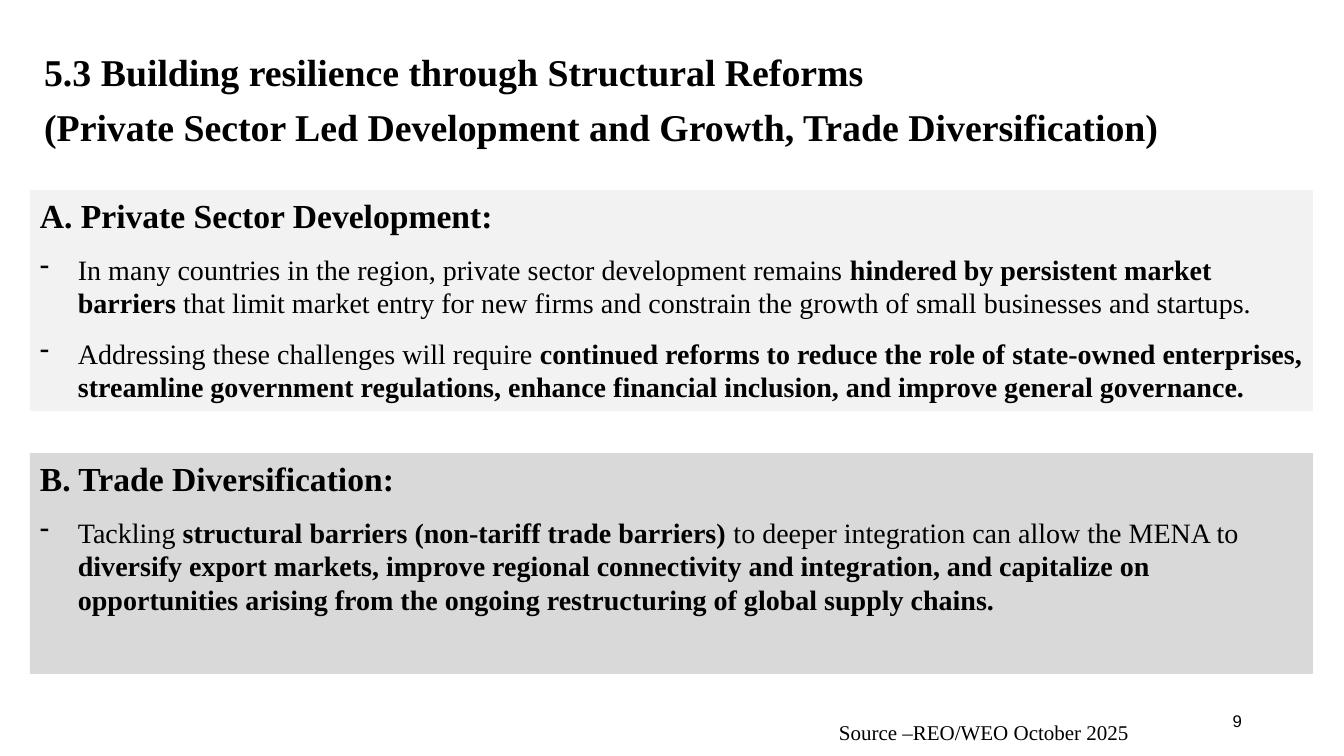
import pptx
import pptx.dml.color
import pptx.enum.shapes
import pptx.enum.text
import pptx.oxml
import pptx.oxml.ns
import pptx.util

TITLE = [
    "5.3 Building resilience through Structural Reforms",
    "(Private Sector Led Development and Growth, Trade Diversification)",
]
PANELS = [
    ("A. Private Sector Development:", "F2F2F2", [
        [("In many countries in the region, private sector development remains ", False),
         ("hindered by persistent market barriers ", True),
         ("that limit market entry for new firms and constrain the growth of "
          "small businesses and startups.", False)],
        [("Addressing these challenges will require ", False),
         ("continued reforms to reduce the role of state-owned enterprises, "
          "streamline government regulations, enhance financial inclusion, "
          "and improve general governance.", True)],
    ]),
    ("B. Trade Diversification:", "D9D9D9", [
        [("Tackling ", False),
         ("structural barriers (non-tariff trade barriers) ", True),
         ("to deeper integration can allow the MENA to ", False),
         ("diversify export markets, improve regional connectivity and integration, "
          "and capitalize on opportunities arising from the ongoing restructuring "
          "of global supply chains.", True)],
    ]),
]
SOURCE = "Source –REO/WEO October 2025"
PAGE_NUMBER = "9"


class Theme:
    serif, sans = "Times New Roman", "Arial"
    ink = "000000"
    title, heading, body, source, number = 27, 24, 20, 15, 12
    gap = 6


PX = 914400 / 100.8
PANEL_LEFT, PANEL_TOP, PANEL_WIDTH, PANEL_HEIGHT, PANEL_STEP = 30, 190, 1283, 221, 263
INDENT = 38


def px(*lengths):
    return [round(length * PX) for length in lengths]


def color(value):
    return pptx.dml.color.RGBColor.from_string(value)


def style(para, size, bold=False, name=Theme.serif):
    para.font.name = name
    para.font.size = pptx.util.Pt(size)
    para.font.bold = bold
    para.font.color.rgb = color(Theme.ink)


def prepare(box, anchor=pptx.enum.text.MSO_ANCHOR.TOP):
    frame = box.text_frame
    frame.word_wrap = True
    frame.auto_size = pptx.enum.text.MSO_AUTO_SIZE.NONE
    frame.vertical_anchor = anchor
    return frame


def add_dash(para):
    properties = para._p.get_or_add_pPr()
    indent = px(INDENT)[0]
    properties.set("marL", str(indent))
    properties.set("indent", str(-indent))
    properties.append(pptx.oxml.parse_xml(
        f'<a:buChar {pptx.oxml.ns.nsdecls("a")} char="-"/>'))


def add_title(page):
    box = page.shapes.title
    box.left, box.top, box.width, box.height = px(34, 35, 1235, 101)
    frame = prepare(box)
    for index, line in enumerate(TITLE):
        para = frame.add_paragraph() if index else frame.paragraphs[0]
        para.text = line
        para.alignment = pptx.enum.text.PP_ALIGN.LEFT
        para.line_spacing = 1.2
        style(para, Theme.title, True)


def add_panel(page, index, heading, fill, points):
    box = page.shapes.add_shape(
        pptx.enum.shapes.MSO_SHAPE.RECTANGLE,
        *px(PANEL_LEFT, PANEL_TOP + index * PANEL_STEP, PANEL_WIDTH, PANEL_HEIGHT))
    box.shadow.inherit = False
    box.fill.solid()
    box.fill.fore_color.rgb = color(fill)
    box.line.fill.background()
    frame = prepare(box)
    title = frame.paragraphs[0]
    title.text = heading
    style(title, Theme.heading, True)
    for point in points:
        para = frame.add_paragraph()
        add_dash(para)
        para.space_before = pptx.util.Pt(Theme.gap)
        style(para, Theme.body)
        for text, bold in point:
            span = para.add_run()
            span.text = text
            span.font.bold = bold
    for para in frame.paragraphs:
        para.alignment = pptx.enum.text.PP_ALIGN.LEFT
        para.space_after = pptx.util.Pt(Theme.gap)


def add_source(page):
    box = page.shapes.add_textbox(*px(829, 715, 383, 35))
    para = prepare(box).paragraphs[0]
    para.text = SOURCE
    style(para, Theme.source)


def add_page_number(page):
    box = page.shapes.add_textbox(*px(949, 701, 303, 40))
    para = prepare(box, pptx.enum.text.MSO_ANCHOR.MIDDLE).paragraphs[0]
    para.alignment = pptx.enum.text.PP_ALIGN.RIGHT
    style(para, Theme.number, name=Theme.sans)
    para.text = PAGE_NUMBER


def main():
    deck = pptx.Presentation()
    deck.slide_width, deck.slide_height = px(1344, 756)
    page = deck.slides.add_slide(deck.slide_layouts[5])
    add_page_number(page)
    for index, panel in enumerate(PANELS):
        add_panel(page, index, *panel)
    add_title(page)
    add_source(page)
    deck.save("out.pptx")


if __name__ == "__main__":
    main()
